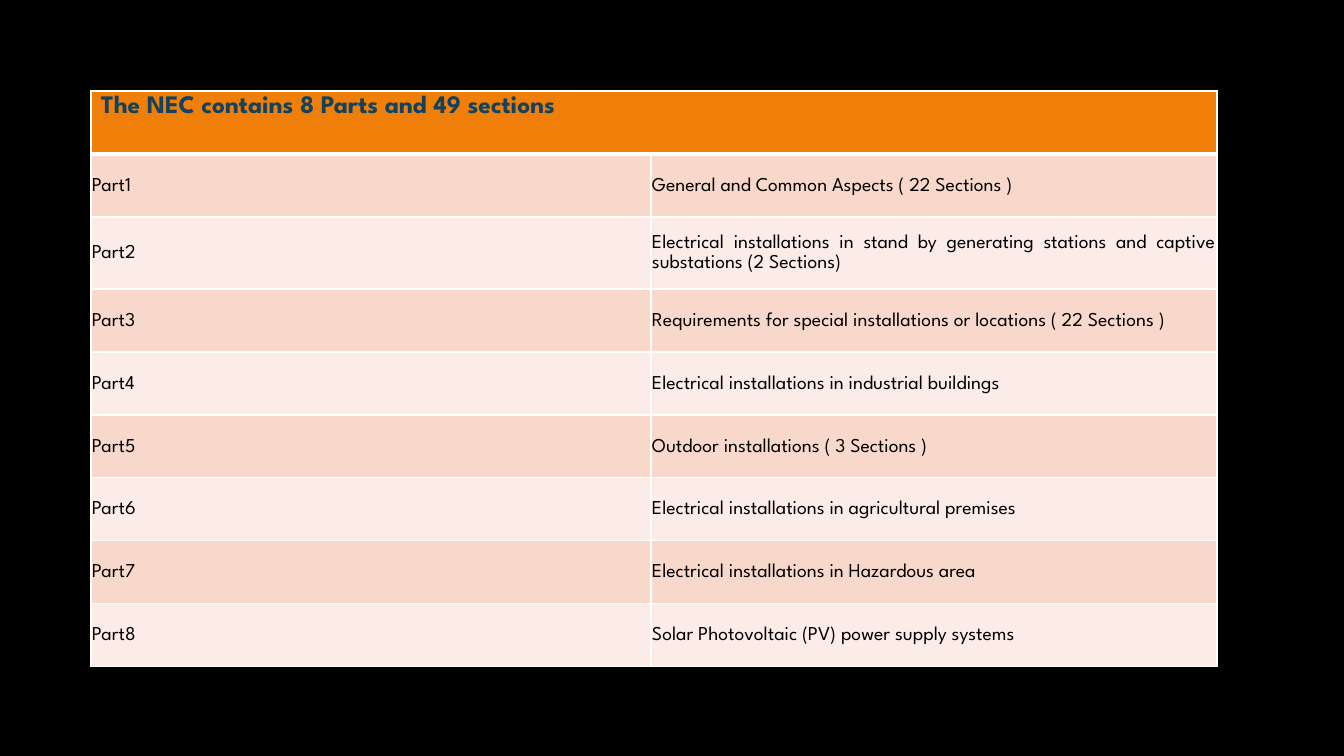
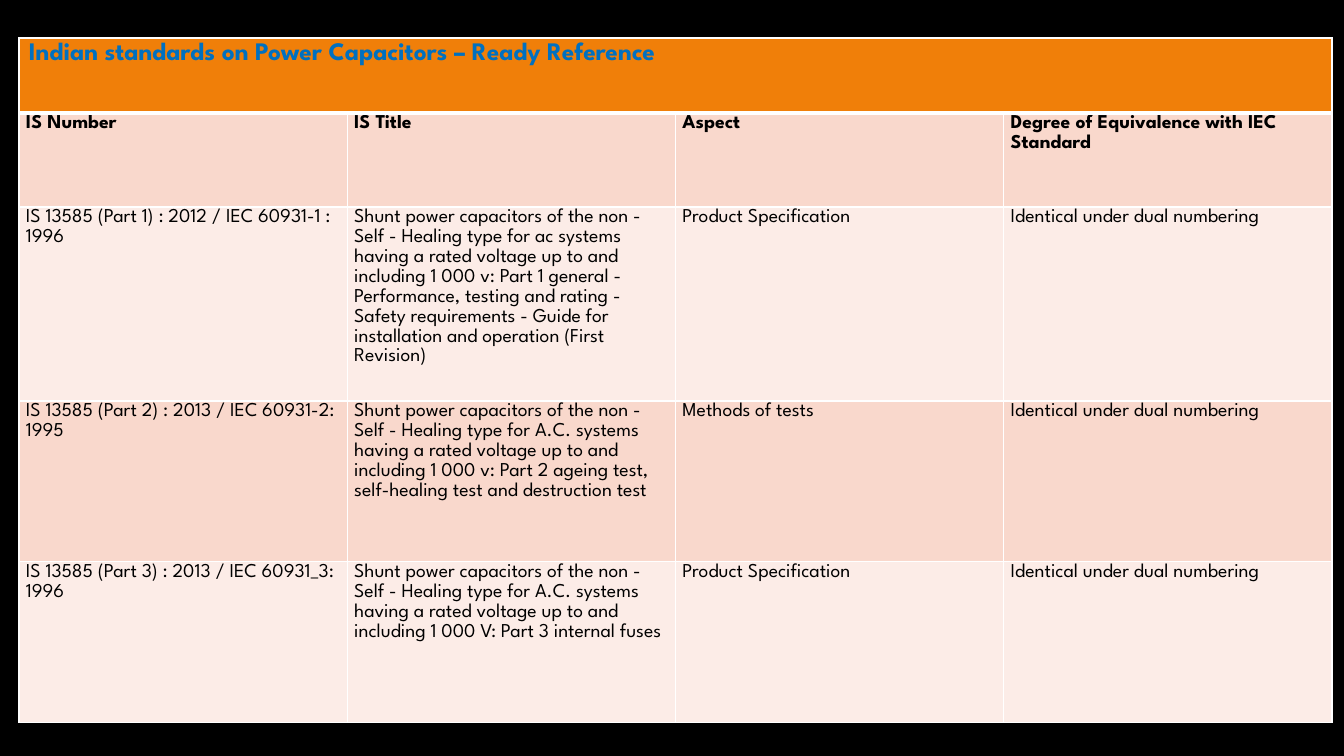
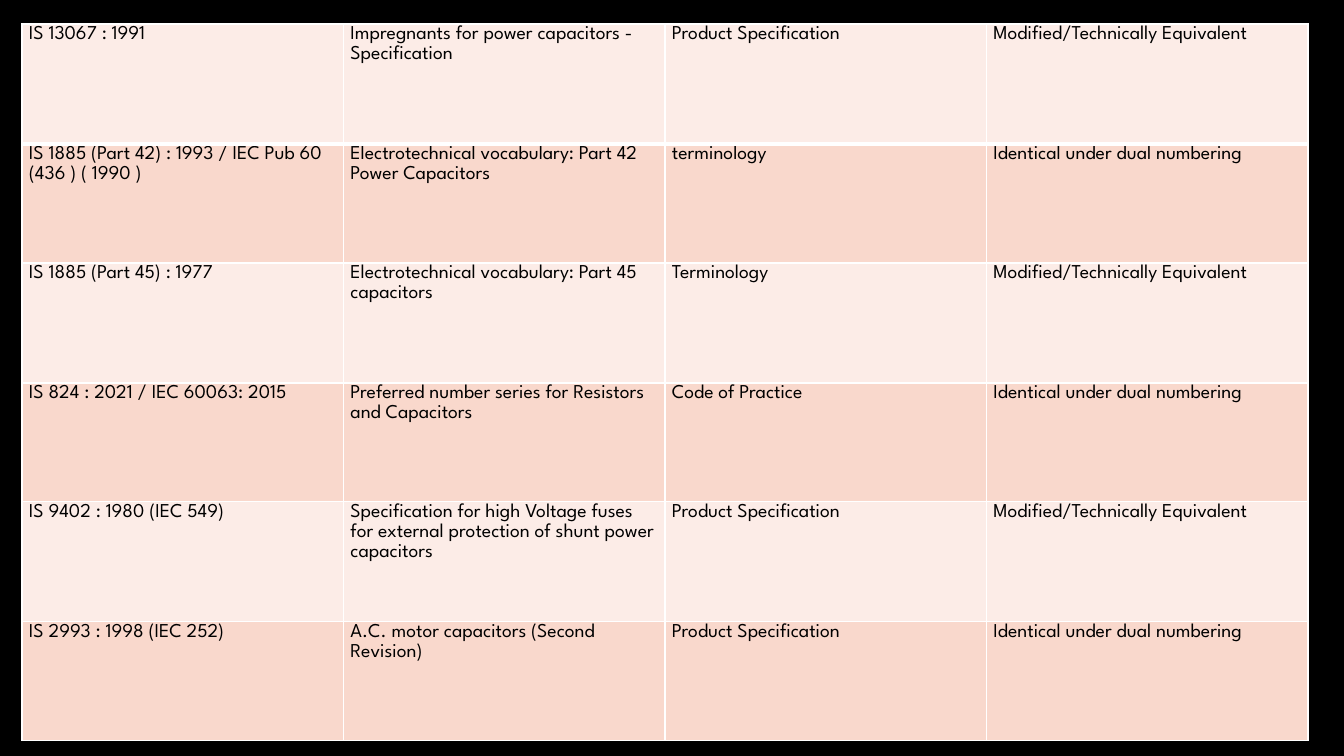
from dataclasses import dataclass
from itertools import product

from lxml.etree import SubElement
from pptx import Presentation
from pptx.dml.color import RGBColor
from pptx.enum.text import MSO_ANCHOR, PP_ALIGN
from pptx.oxml.ns import qn
from pptx.util import Emu, Pt

PX = 914400 / 100.8
SLIDE_SIZE = (1344, 756)


@dataclass(frozen=True)
class Theme:
    background: str = "000000"
    heading_fill: str = "F07F09"
    dark_band: str = "F9D8CC"
    light_band: str = "FCECE7"
    border: str = "FFFFFF"
    text: str = "000000"
    font: str = "League Spartan"
    heading_size: int = 18
    body_size: int = 14
    thin_border: int = 1
    thick_border: int = 3


THEME = Theme()

HEADING_FORMAT = {
    "margins": (10, 5, 10, 5),
    "cell": {"vertical_anchor": MSO_ANCHOR.TOP},
    "paragraph": {"alignment": PP_ALIGN.LEFT},
}
PARTS_FORMAT = {
    "margins": (1, 1, 1, 1),
    "cell": {"vertical_anchor": MSO_ANCHOR.MIDDLE},
    "paragraph": {"alignment": PP_ALIGN.JUSTIFY, "line_spacing": 1.1},
}
STANDARDS_FORMAT = {
    "margins": (7, 0, 7, 0),
    "cell": {"vertical_anchor": MSO_ANCHOR.TOP},
    "paragraph": {"alignment": PP_ALIGN.LEFT, "line_spacing": 1.1},
}

SPECIFICATION = "Product Specification"
IDENTICAL = "Identical under dual numbering"
MODIFIED = "Modified/Technically Equivalent"
SHUNT = "Shunt power capacitors of the non - Self - Healing type for "
RATED = " systems having a rated voltage up to and including 1 000 "

PART_TITLES = (
    "General and Common Aspects ( 22 Sections )",
    "Electrical installations in stand by generating stations and captive substations (2 Sections)",
    "Requirements for special installations or locations ( 22 Sections )",
    "Electrical installations in industrial buildings",
    "Outdoor installations ( 3 Sections )",
    "Electrical installations in agricultural premises",
    "Electrical installations in Hazardous area",
    "Solar Photovoltaic (PV) power supply systems",
)

TABLES = (
    {
        "heading": ("The NEC contains 8 Parts and 49 sections", "14425D"),
        "position": (91, 91),
        "columns": (560, 566),
        "rows": (63, 63, 72, 63, 63, 63, 63, 63, 63),
        "format": PARTS_FORMAT,
        "bold_rows": (0,),
        "body": [(f"Part{number}", title) for number, title in enumerate(PART_TITLES, 1)],
    },
    {
        "heading": ("Indian standards on Power Capacitors – Ready Reference", "0070C0"),
        "position": (19, 38),
        "columns": (1313 / 4,) * 4,
        "rows": (75, 94, 194, 161, 161),
        "format": STANDARDS_FORMAT,
        "bold_rows": (0, 1),
        "body": [
            ("IS Number", "IS Title", "Aspect", "Degree of Equivalence with IEC Standard"),
            (
                "IS 13585 (Part 1) : 2012 / IEC 60931-1 : 1996",
                SHUNT + "ac" + RATED + "v: Part 1 general - Performance, testing and rating - "
                "Safety requirements - Guide for installation and operation (First Revision)",
                SPECIFICATION,
                IDENTICAL,
            ),
            (
                "IS 13585 (Part 2) : 2013 / IEC 60931-2: 1995",
                SHUNT + "A.C." + RATED + "v: Part 2 ageing test, self-healing test and destruction test",
                "Methods of tests",
                IDENTICAL,
            ),
            (
                "IS 13585 (Part 3) : 2013 / IEC 60931_3: 1996",
                SHUNT + "A.C." + RATED + "V: Part 3 internal fuses",
                SPECIFICATION,
                IDENTICAL,
            ),
        ],
    },
    {
        "heading": None,
        "position": (22, 24),
        "columns": (1286 / 4,) * 4,
        "rows": (120, 119) * 3,
        "format": STANDARDS_FORMAT,
        "bold_rows": (),
        "body": [
            ("IS 13067 : 1991", "Impregnants for power capacitors - Specification", SPECIFICATION, MODIFIED),
            (
                "IS 1885 (Part 42) : 1993 / IEC Pub 60 (436 ) ( 1990 )",
                "Electrotechnical vocabulary: Part 42 Power Capacitors",
                "terminology",
                IDENTICAL,
            ),
            (
                "IS 1885 (Part 45) : 1977",
                "Electrotechnical vocabulary: Part 45 capacitors",
                "Terminology",
                MODIFIED,
            ),
            (
                "IS 824 : 2021 / IEC 60063: 2015",
                "Preferred number series for Resistors and Capacitors",
                "Code of Practice",
                IDENTICAL,
            ),
            (
                "IS 9402 : 1980 (IEC 549)",
                "Specification for high Voltage fuses for external protection of shunt power capacitors",
                SPECIFICATION,
                MODIFIED,
            ),
            ("IS 2993 : 1998 (IEC 252)", "A.C. motor capacitors (Second Revision)", SPECIFICATION, IDENTICAL),
        ],
    },
)


def px(length):
    return Emu(round(length * PX))


def apply(target, values):
    for name, value in values.items():
        setattr(target, name, value)


def set_fill(fill, color):
    fill.solid()
    fill.fore_color.rgb = RGBColor.from_string(color)


def set_borders(cell, row):
    properties = cell._tc.get_or_add_tcPr()
    thick_sides = {0: "lnB", 1: "lnT"}
    for side in ("lnL", "lnR", "lnT", "lnB"):
        width = THEME.thick_border if thick_sides.get(row) == side else THEME.thin_border
        line = SubElement(properties, qn(f"a:{side}"), w=str(Pt(width)))
        solid = SubElement(line, qn("a:solidFill"))
        SubElement(solid, qn("a:srgbClr"), val=THEME.border)


def write_cell(cell, text, cell_format, size, color, bold):
    sides = ("margin_left", "margin_top", "margin_right", "margin_bottom")
    apply(cell, dict(zip(sides, map(px, cell_format["margins"]))))
    apply(cell, cell_format["cell"])
    paragraph = cell.text_frame.paragraphs[0]
    apply(paragraph, cell_format["paragraph"])
    run = paragraph.add_run()
    run.text = text
    apply(run.font, {"name": THEME.font, "size": Pt(size), "bold": bold})
    run.font.color.rgb = RGBColor.from_string(color)


def add_standards_table(slide, content):
    columns, rows = content["columns"], content["rows"]
    box = (*content["position"], sum(columns), sum(rows))
    frame = slide.shapes.add_table(len(rows), len(columns), *map(px, box))
    table = frame.table
    apply(table, {"first_row": False, "horz_banding": False})
    for column, width in zip(table.columns, columns):
        column.width = px(width)
    for row, height in zip(table.rows, rows):
        row.height = px(height)

    heading = content["heading"]
    for row, column in product(range(len(rows)), range(len(columns))):
        cell = table.cell(row, column)
        set_borders(cell, row)
        band = THEME.dark_band if row % 2 else THEME.light_band
        set_fill(cell.fill, THEME.heading_fill if heading and row == 0 else band)

    if heading:
        title, color = heading
        table.cell(0, 0).merge(table.cell(0, len(columns) - 1))
        write_cell(table.cell(0, 0), title, HEADING_FORMAT, THEME.heading_size, color, True)

    for row, texts in enumerate(content["body"], 1 if heading else 0):
        for column, text in enumerate(texts):
            bold = row in content["bold_rows"]
            write_cell(table.cell(row, column), text, content["format"], THEME.body_size, THEME.text, bold)


def main():
    presentation = Presentation()
    presentation.slide_width, presentation.slide_height = map(px, SLIDE_SIZE)
    set_fill(presentation.slide_master.background.fill, THEME.background)
    blank_layout = presentation.slide_layouts[6]
    for content in TABLES:
        add_standards_table(presentation.slides.add_slide(blank_layout), content)
    presentation.save("out.pptx")


if __name__ == "__main__":
    main()
